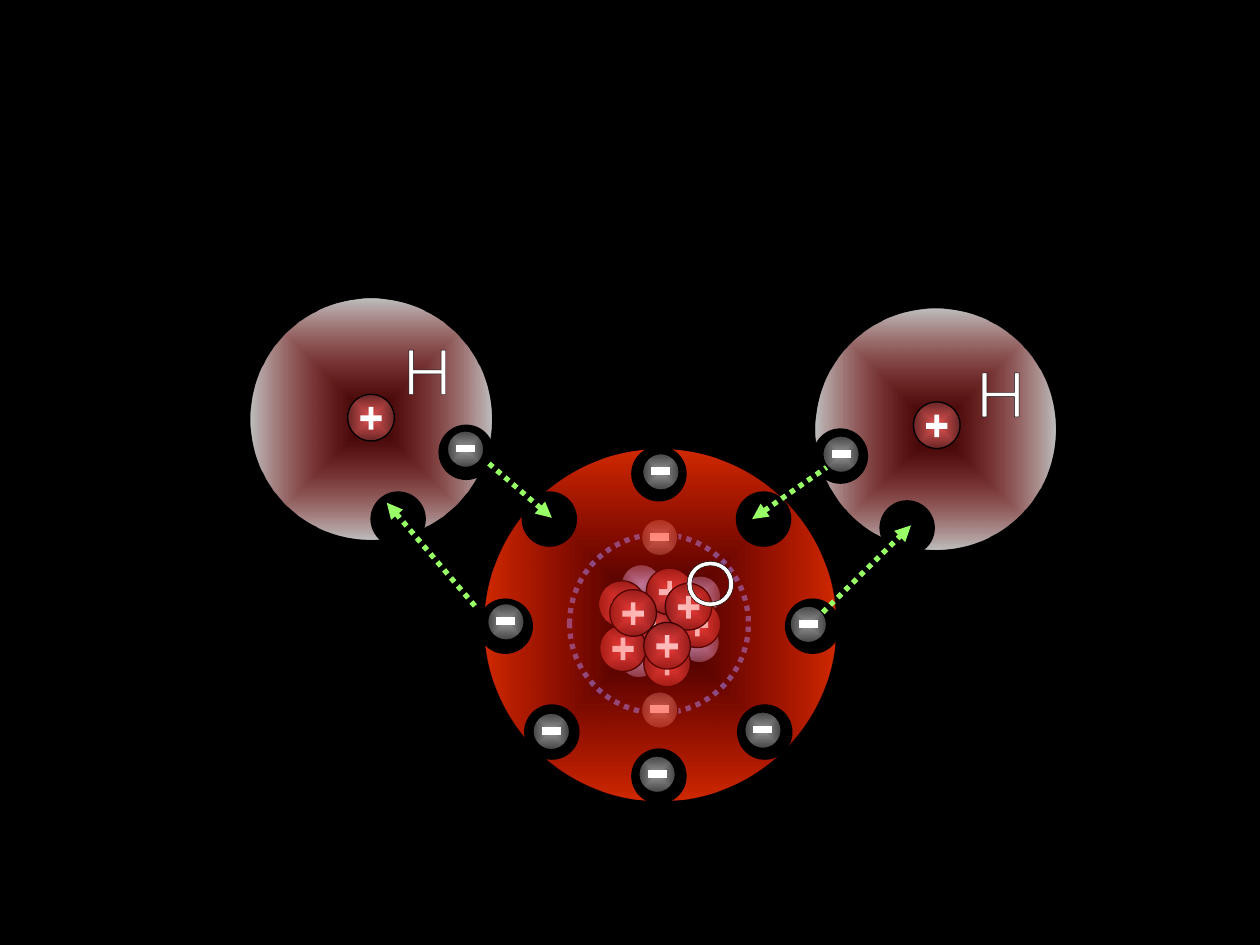
import pptx
import pptx.util
import pptx.oxml
import pptx.oxml.ns
from pptx.dml.color import RGBColor
from pptx.enum.dml import MSO_LINE
from pptx.enum.shapes import MSO_CONNECTOR, MSO_SHAPE
from pptx.enum.text import MSO_ANCHOR, PP_ALIGN

Inches = pptx.util.Inches
Pt = pptx.util.Pt
qn = pptx.oxml.ns.qn
NS = pptx.oxml.ns.nsdecls("a")

COLORS = {
    "black": "000000", "white": "FFFFFF", "orbit": "3574E5", "arrow": "99FF66",
    "red": "FF0000", "silver": "EAEAEA", "orange": "FF3300",
    "proton": "E35353", "proton edge": "692626",
    "neutron": "A1AEE7", "neutron edge": "4B516B",
    "electron": "969696", "electron edge": "454545",
}

# kind: diameter, (centre colour, opacity), (rim colour, opacity)
GRADIENTS = {
    "hydrogen": (1.91, ("red", 20), ("silver", 81)),
    "oxygen": (2.78, ("red", 20), ("orange", 81)),
    "proton": (0.37, ("proton", 100), ("proton edge", 100)),
    "neutron": (0.32, ("neutron", 100), ("neutron edge", 100)),
    "electron": (0.29, ("electron", 100), ("electron edge", 100)),
}
HOLE_SIZE, ORBIT_SIZE = 0.44, 1.42

# Back to front: kind and the left, top corners of its discs
LAYERS = [
    ("hydrogen", [(6.47, 2.45)]),
    ("proton", [(7.25, 3.19)]),
    ("hole", [(6.45, 3.4), (6.98, 3.97)]),
    ("electron", [(6.53, 3.46)]),
    ("orbit", [(4.52, 4.24)]),
    ("electron", [(5.09, 4.12), (5.09, 5.49)]),
    ("neutron", [(4.91, 5.06), (5.4, 4.57), (5.39, 4.94), (4.93, 4.48)]),
    ("proton", [(5, 4.8), (5.35, 4.77), (5.11, 5.08), (4.75, 4.61), (5.13, 4.51),
                (4.76, 4.96), (5.28, 4.63), (4.84, 4.68), (5.11, 4.94)]),
    ("oxygen", [(3.85, 3.57)]),
    ("hole", [(3.79, 4.75), (5.01, 3.54), (5.01, 5.94), (5.84, 3.9),
              (4.14, 3.9), (4.16, 5.59), (5.85, 5.59)]),
    ("electron", [(5.1, 3.6), (5.07, 6), (3.87, 4.79), (5.91, 5.65), (4.23, 5.66)]),
    ("hole", [(6.23, 4.75)]),
    ("electron", [(6.27, 4.81)]),
    ("hydrogen", [(1.99, 2.37)]),
    ("proton", [(2.76, 3.13)]),
    ("hole", [(3.48, 3.37), (2.94, 3.9)]),
    ("electron", [(3.55, 3.42)]),
]

# Start, end and the end that carries the arrowhead
ARROWS = [
    ((5.97, 4.12), (6.56, 3.71), "headEnd"),
    ((6.53, 4.86), (7.23, 4.17), "tailEnd"),
    ((3.07, 3.99), (3.77, 4.81), "headEnd"),
    ((4.38, 4.11), (3.87, 3.67), "headEnd"),
]
SYMBOLS = [("O", 5.33, 4.26), ("H", 7.64, 2.76), ("H", 3.09, 2.58)]


def color(name):
    return RGBColor.from_string(COLORS[name])


def add_line(shapes, start, end, line_color, width):
    line = shapes.add_connector(
        MSO_CONNECTOR.STRAIGHT, *[Inches(value) for value in (*start, *end)])
    line.line.color.rgb = color(line_color)
    line.line.width = Pt(width)
    line._element.spPr.append(pptx.oxml.parse_xml(f"<a:effectLst {NS}/>"))
    return line


deck = pptx.Presentation()
deck.slide_width, deck.slide_height = Inches(10), Inches(7.5)
page = deck.slides.add_slide(deck.slide_layouts[6])
page.background.fill.solid()
page.background.fill.fore_color.rgb = color("black")

for kind, corners in LAYERS:
    for left, top in corners:
        charged = kind in ("proton", "electron")
        shapes = page.shapes.add_group_shape().shapes if charged else page.shapes
        size = {"hole": HOLE_SIZE, "orbit": ORBIT_SIZE}.get(kind) or GRADIENTS[kind][0]
        disc = shapes.add_shape(
            MSO_SHAPE.OVAL, Inches(left), Inches(top), Inches(size), Inches(size))
        disc.shadow.inherit = False
        disc.fill.background()
        disc.line.fill.background()

        if kind == "hole":
            disc.fill.solid()
            disc.fill.fore_color.rgb = color("black")
        elif kind == "orbit":
            disc.line.color.rgb = color("orbit")
            disc.line.width = Pt(3)
            disc.line.dash_style = MSO_LINE.ROUND_DOT
        else:
            stops = "".join(
                f'<a:gs pos="{position}"><a:srgbClr val="{COLORS[name]}">'
                f'<a:alpha val="{opacity * 1000}"/></a:srgbClr></a:gs>'
                for position, (name, opacity) in zip((0, 100000), GRADIENTS[kind][1:]))
            gradient = pptx.oxml.parse_xml(
                f'<a:gradFill {NS} rotWithShape="1"><a:gsLst>{stops}</a:gsLst>'
                '<a:path path="shape"><a:fillToRect l="50000" t="50000" r="50000" b="50000"/>'
                '</a:path></a:gradFill>')
            properties = disc._element.spPr
            properties.replace(properties.find(qn("a:noFill")), gradient)
        if charged or kind == "neutron":
            disc.line.color.rgb = color("black")
            disc.line.width = Pt(0.75)

        if kind == "proton":
            plus = shapes.add_shape(MSO_SHAPE.CROSS, Inches(left + 0.1), Inches(top + 0.1),
                                    Inches(0.17), Inches(0.18))
            plus.adjustments[0] = 0.392
            plus.shadow.inherit = False
            plus.fill.solid()
            plus.fill.fore_color.rgb = color("white")
            plus.line.fill.background()
        elif kind == "electron":
            middle = top + 0.14
            add_line(shapes, (left + 0.07, middle), (left + 0.22, middle), "white", 4.5)

for start, end, arrow_end in ARROWS:
    arrow = add_line(page.shapes, start, end, "arrow", 3)
    arrow.line.dash_style = MSO_LINE.ROUND_DOT
    arrow.line._get_or_add_ln().append(
        pptx.oxml.parse_xml(f'<a:{arrow_end} {NS} type="triangle"/>'))

for symbol, left, top in SYMBOLS:
    box = page.shapes.add_textbox(Inches(left), Inches(top), Inches(0.4), Inches(0.51))
    box.text_frame.word_wrap = False
    box.text_frame.vertical_anchor = MSO_ANCHOR.TOP
    para = box.text_frame.paragraphs[0]
    para.alignment = PP_ALIGN.CENTER
    span = para.add_run()
    span.text = symbol
    span.font.name = "Montserrat"
    span.font.size = Pt(36)
    span.font.color.rgb = color("white")
    span.font._element.insert(0, pptx.oxml.parse_xml(
        f'<a:ln {NS} w="9525"><a:solidFill><a:srgbClr val="{COLORS["black"]}"/>'
        '</a:solidFill></a:ln>'))

deck.save("out.pptx")
